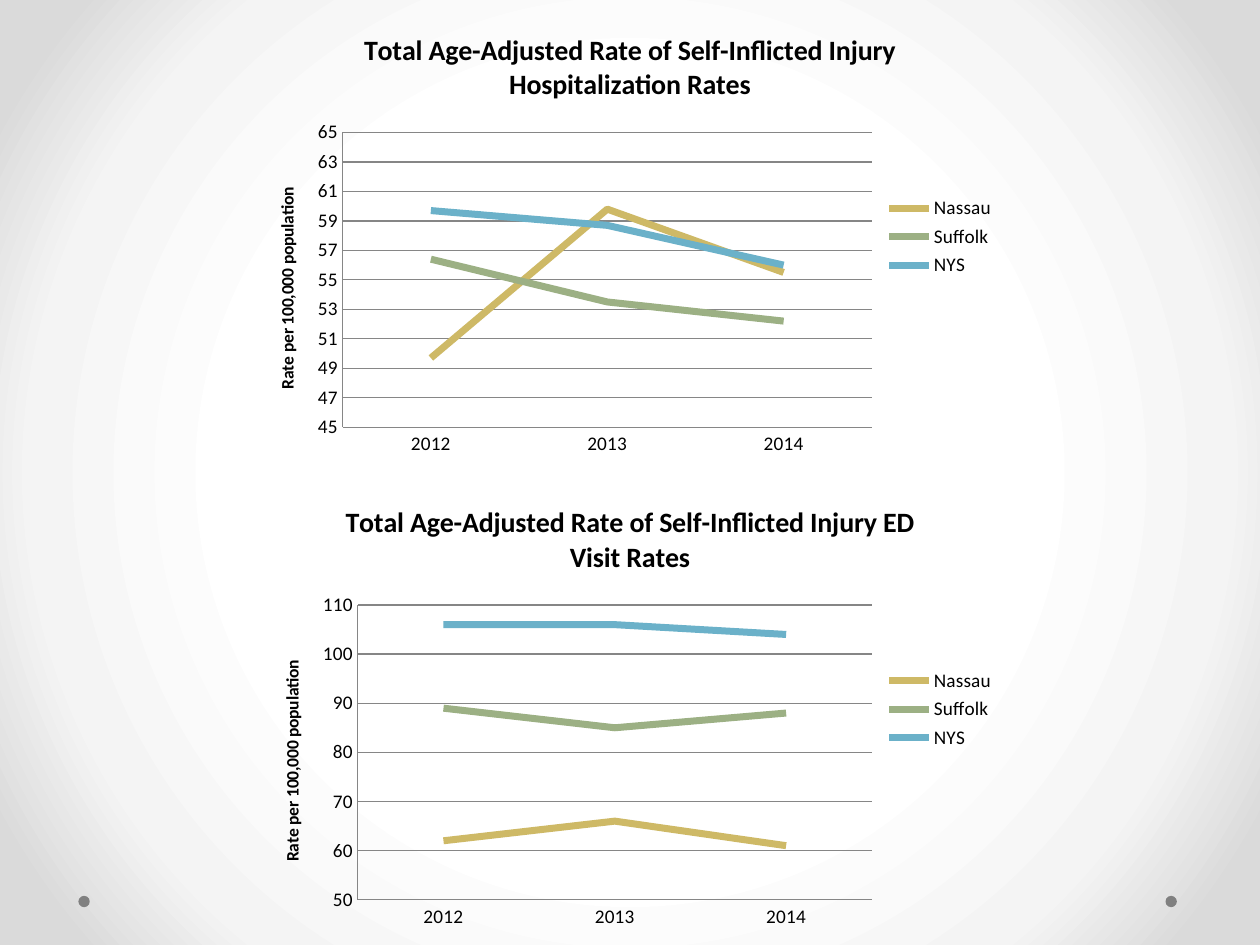
from lxml import etree
from pptx import Presentation
from pptx.chart.data import CategoryChartData
from pptx.dml.color import RGBColor
from pptx.enum.chart import XL_CHART_TYPE as ChartType
from pptx.enum.chart import XL_LEGEND_POSITION as LegendPosition
from pptx.enum.chart import XL_TICK_MARK as TickMark
from pptx.enum.shapes import MSO_SHAPE as Shape
from pptx.oxml import parse_xml
from pptx.oxml.ns import nsdecls, qn
from pptx.util import Pt

# Content
YEARS = ("2012", "2013", "2014")
AXIS_TITLE = "Rate per 100,000 population"
# plot: left, top, width, height as shares of the chart
CHARTS = [
    {
        "title": "Total Age-Adjusted Rate of Self-Inflicted Injury Hospitalization Rates",
        "scale": (45, 65, 2),
        "plot": (0.12, 0.27, 0.7, 0.65),
        "rates": {
            "Nassau": (49.7, 59.8, 55.5),
            "Suffolk": (56.4, 53.5, 52.2),
            "NYS": (59.7, 58.7, 56),
        },
    },
    {
        "title": "Total Age-Adjusted Rate of Self-Inflicted Injury ED Visit Rates",
        "scale": (50, 110, 10),
        "plot": (0.14, 0.27, 0.68, 0.65),
        "rates": {
            "Nassau": (62, 66, 61),
            "Suffolk": (89, 85, 88),
            "NYS": (106, 106, 104),
        },
    },
]

THEME = {
    "font": "Calibri",
    "text": "000000",
    "grid": "868686",
    "dot": "808080",
    "series": {"Nassau": "CEB966", "Suffolk": "9CB084", "NYS": "6BB1C9"},
    "background": ((0, "FFFFFF"), (50, "FFFFFF"), (76, "F4F4F4"),
                   (92, "DADADA"), (100, "DADADA")),
    "title": 16, "label": 11, "axis_title": 10,
    "rate_line": 4, "grid_line": 0.75,
}

# Layout in points
PAGE_WIDTH, PAGE_HEIGHT = 720, 540
CHART_WIDTH, CHART_HEIGHT = 432, 259.2
CHART_TOP, CHART_STEP = 5.76, 270
DOT_SIZE, DOT_TOP, DOT_LEFTS = 6.5, 511.9, (44.8, 666)


def set_font(font, size, bold=False):
    font.name = THEME["font"]
    font.size = Pt(size)
    font.bold = bold
    font.color.rgb = RGBColor.from_string(THEME["text"])


def set_line(line, color, width):
    line.color.rgb = RGBColor.from_string(color)
    line.width = Pt(width)


def set_title(owner, text, size):
    frame = owner.text_frame
    frame.text = text
    set_font(frame.paragraphs[0].font, size, bold=True)


def paint_background(page):
    page.background.fill.solid()
    solid = page.element.find(".//" + qn("p:bgPr")).find(qn("a:solidFill"))
    stops = "".join(
        f'<a:gs pos="{share * 1000}"><a:srgbClr val="{color}"/></a:gs>'
        for share, color in THEME["background"])
    gradient = parse_xml(
        f'<a:gradFill {nsdecls("a")} rotWithShape="1"><a:gsLst>{stops}</a:gsLst>'
        '<a:path path="circle"><a:fillToRect l="50000" t="50000" r="50000" b="50000"/>'
        '</a:path></a:gradFill>')
    solid.getparent().replace(solid, gradient)


def place_plot(chart, plot):
    area = chart.element.find(".//" + qn("c:plotArea"))
    for old in area.findall(qn("c:layout")):
        area.remove(old)
    layout = etree.Element(qn("c:layout"))
    manual = etree.SubElement(layout, qn("c:manualLayout"))
    settings = [("layoutTarget", "inner"), ("xMode", "edge"), ("yMode", "edge")]
    for name, value in settings + list(zip("xywh", plot)):
        etree.SubElement(manual, qn(f"c:{name}")).set("val", str(value))
    area.insert(0, layout)


def add_rate_chart(page, content, top):
    data = CategoryChartData()
    data.categories = YEARS
    for name, rates in content["rates"].items():
        data.add_series(name, rates)
    chart = page.shapes.add_chart(
        ChartType.LINE, Pt((PAGE_WIDTH - CHART_WIDTH) / 2), Pt(top),
        Pt(CHART_WIDTH), Pt(CHART_HEIGHT), data).chart
    set_font(chart.font, THEME["label"])
    set_title(chart.chart_title, content["title"], THEME["title"])
    chart.chart_title.include_in_layout = False

    # Axes
    years, rates = chart.category_axis, chart.value_axis
    for axis in (years, rates):
        axis.major_tick_mark = axis.minor_tick_mark = TickMark.NONE
        set_font(axis.tick_labels.font, THEME["label"])
        set_line(axis.format.line, THEME["grid"], THEME["grid_line"])
    rates.minimum_scale, rates.maximum_scale, rates.major_unit = content["scale"]
    rates.has_major_gridlines = True
    set_line(rates.major_gridlines.format.line, THEME["grid"], THEME["grid_line"])
    set_title(rates.axis_title, AXIS_TITLE, THEME["axis_title"])

    # Legend and lines
    chart.has_legend = True
    chart.legend.position = LegendPosition.RIGHT
    chart.legend.include_in_layout = False
    set_font(chart.legend.font, THEME["label"])
    chart.plots[0].vary_by_categories = False
    for series in chart.plots[0].series:
        series.smooth = False
        set_line(series.format.line, THEME["series"][series.name], THEME["rate_line"])
    place_plot(chart, content["plot"])


def main():
    deck = Presentation()
    deck.slide_width, deck.slide_height = Pt(PAGE_WIDTH), Pt(PAGE_HEIGHT)
    page = deck.slides.add_slide(deck.slide_layouts[6])
    paint_background(page)

    # Corner dots
    for left in DOT_LEFTS:
        dot = page.shapes.add_shape(
            Shape.OVAL, Pt(left), Pt(DOT_TOP), Pt(DOT_SIZE), Pt(DOT_SIZE))
        dot.shadow.inherit = False
        dot.fill.solid()
        dot.fill.fore_color.rgb = RGBColor.from_string(THEME["dot"])
        dot.line.fill.background()

    # Stacked charts
    for row, content in enumerate(CHARTS):
        add_rate_chart(page, content, CHART_TOP + row * CHART_STEP)
    deck.save("out.pptx")


if __name__ == "__main__":
    main()
